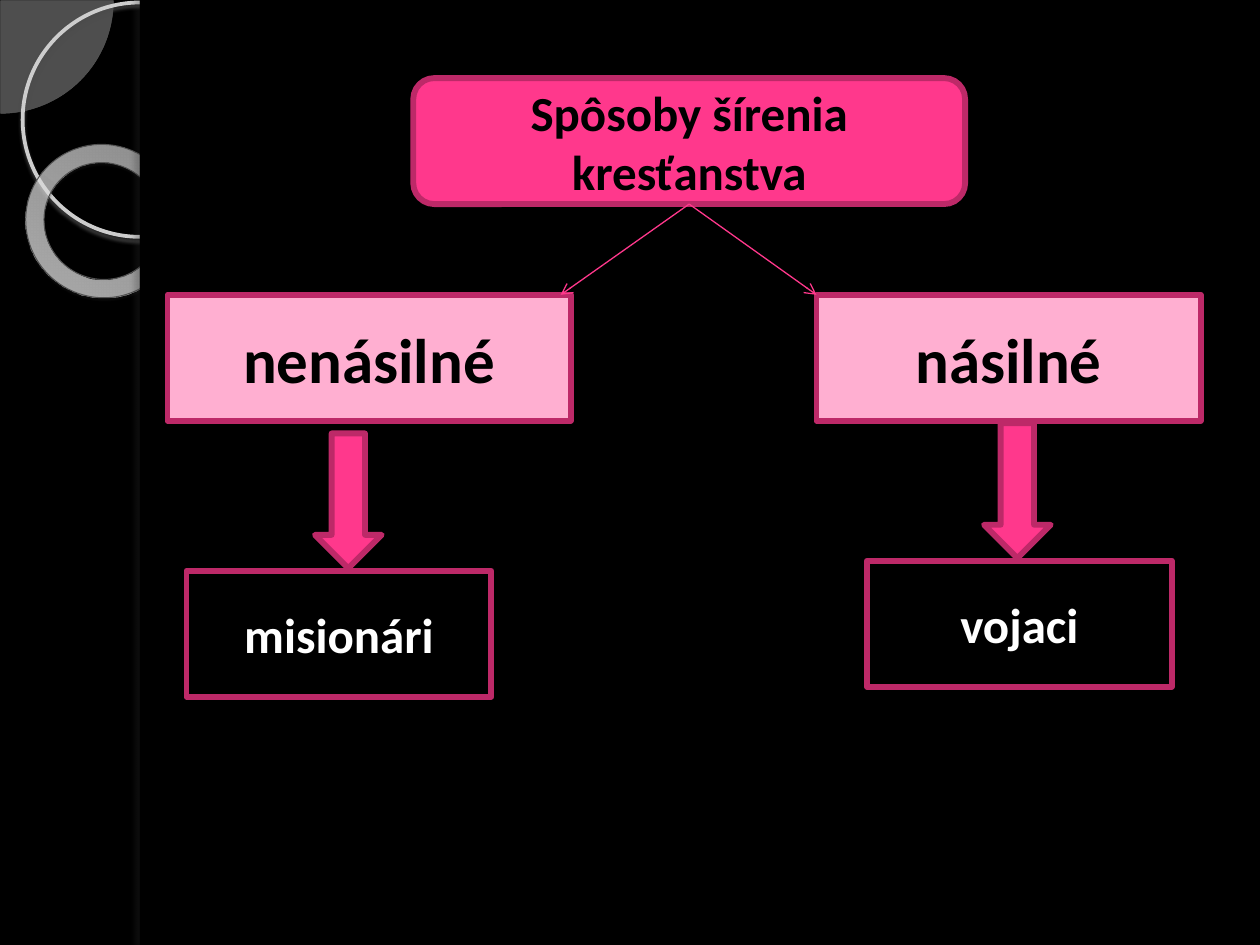
import pptx
import pptx.util
import pptx.dml.color
import pptx.enum.shapes
import pptx.enum.text
import pptx.oxml
import pptx.oxml.ns
from lxml import etree

Inches, Pt = pptx.util.Inches, pptx.util.Pt
RGB = pptx.dml.color.RGBColor.from_string
KIND = pptx.enum.shapes.MSO_SHAPE
qn = pptx.oxml.ns.qn

HEX = {
    "black": "000000", "white": "FFFFFF",
    "pink": "FF388C", "pale": "FFAFD1", "rose": "BD2968",
    "smoke": "4E4E4E", "rim": "575757", "ring": "CDCDCD",
    "light": "F4F4F4", "fog": "F9F9F9", "edge": "525252",
    "dusk": "4B4B4B", "dark": "252525", "shade": "333333",
}

deck = pptx.Presentation()
deck.slide_width, deck.slide_height = Inches(10), Inches(7.5)
slide = deck.slides.add_slide(deck.slide_layouts[6])
slide.background.fill.solid()
slide.background.fill.fore_color.rgb = RGB(HEX["black"])


def draw(kind, spot, fill=None, line="rose", width=3.35):
    """Add a preset shape at spot (left, top, width, height)."""
    shape = slide.shapes.add_shape(kind, *[Inches(v) for v in spot])
    shape.shadow.inherit = False
    if fill:
        shape.fill.solid()
        shape.fill.fore_color.rgb = RGB(HEX[fill])
    else:
        shape.fill.background()
    if line:
        shape.line.color.rgb = RGB(HEX[line])
        shape.line.width = Pt(width)
    else:
        shape.line.fill.background()
    return shape


def write(shape, text, size=28, color="black"):
    frame = shape.text_frame
    frame.word_wrap = True
    frame.vertical_anchor = pptx.enum.text.MSO_ANCHOR.MIDDLE
    line = frame.paragraphs[0]
    line.alignment = pptx.enum.text.PP_ALIGN.CENTER
    run = line.add_run()
    run.text = text
    run.font.name, run.font.size, run.font.bold = "Calibri", Pt(size), True
    run.font.color.rgb = RGB(HEX[color])


# Circles in the left margin
pie = draw(KIND.PIE, (-0.89, -0.89, 1.79, 1.79), "smoke", "rim", 0.25)
pie.adjustments[0], pie.adjustments[1] = 0, 54
ring = draw(KIND.OVAL, (0.18, 0.02, 1.86, 1.86), None, "ring", 2.15)
donut = draw(KIND.DONUT, (0.2, 1.15, 1.23, 1.21), None, "edge", 0.58)
donut.adjustments[0] = 0.12
donut.rotation = 38.6
donut.fill.gradient()
for stop, tone, alpha in zip(donut.fill.gradient_stops, ("light", "fog"), (70, 55)):
    stop.color.rgb = RGB(HEX[tone])
    for node in donut.fill._xPr.iter(qn("a:srgbClr")):
        if node.get("val") == HEX[tone]:
            etree.SubElement(node, qn("a:alpha"), val=str(alpha * 1000))

# Black panel that cuts the circles off, with a soft left edge
draw(KIND.RECTANGLE, (1.11, 0, 8.89, 7.5), "black", None)
strip = draw(KIND.RECTANGLE, (1.11, 0, 0.08, 7.5), "black", None)

for shape, tone, alpha, blur, dist, angle in (
    (ring, "dusk", 85, 2, 2, 90),
    (donut, "dark", 35, 1, 1.2, 75),
    (strip, "shade", 25, 3, 3, 180),
):
    list_ = shape._element.spPr.find(qn("a:effectLst"))
    cast = etree.SubElement(
        list_, qn("a:outerShdw"), blurRad=str(Pt(blur)), dist=str(Pt(dist)),
        dir=str(angle * 60000), algn="tl", rotWithShape="0")
    node = etree.SubElement(cast, qn("a:srgbClr"), val=HEX[tone])
    etree.SubElement(node, qn("a:alpha"), val=str(alpha * 1000))

# Topic and its two ways
topic = draw(KIND.ROUNDED_RECTANGLE, (3.28, 0.62, 4.38, 1), "pink")
write(topic, "Spôsoby šírenia kresťanstva")

for text, left, width, tip in (
    ("nenásilné", 1.33, 3.2, 4.45),
    ("násilné", 6.48, 3.05, 6.48),
):
    write(draw(KIND.RECTANGLE, (left, 2.34, width, 1), "pale"), text, size=36)
    link = slide.shapes.add_connector(
        pptx.enum.shapes.MSO_CONNECTOR.STRAIGHT,
        Inches(5.47), Inches(1.62), Inches(tip), Inches(2.34))
    link.line.color.rgb = RGB(HEX["pink"])
    link.line.width = Pt(0.75)
    etree.SubElement(link.line._get_or_add_ln(), qn("a:tailEnd"), type="arrow")
    etree.SubElement(link._element.spPr, qn("a:effectLst"))

# Who spreads the faith in each way
for text, left, top, mid, start in (
    ("misionári", 1.48, 4.53, 2.5, 3.44),
    ("vojaci", 6.88, 4.45, 7.81, 3.36),
):
    draw(KIND.DOWN_ARROW, (mid, start, 0.53, 1.07), "pink")
    write(draw(KIND.RECTANGLE, (left, top, 2.42, 1)), text, color="white")

deck.save("out.pptx")
